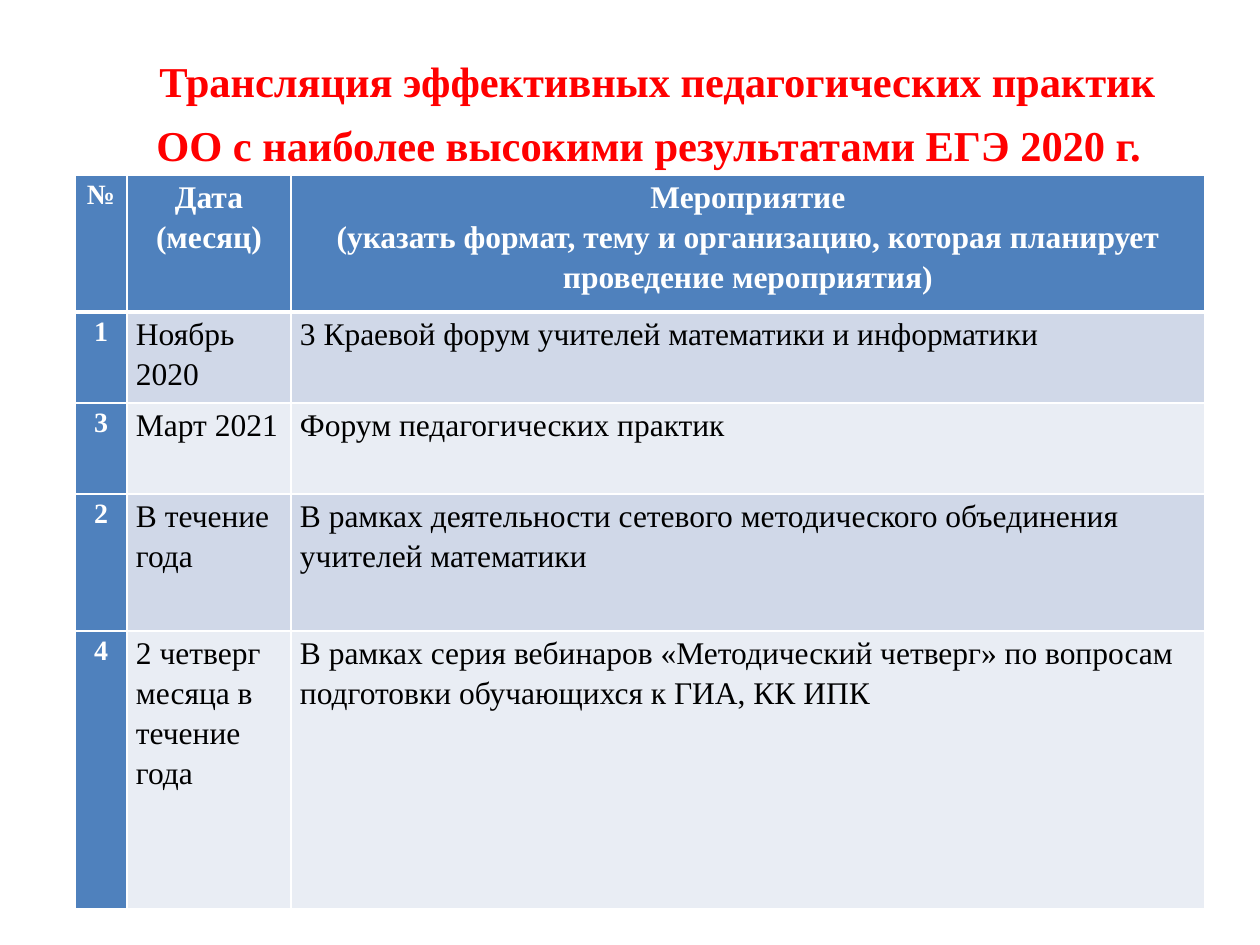
from dataclasses import dataclass

from lxml import etree
from pptx import Presentation
from pptx.dml.color import RGBColor
from pptx.enum.text import MSO_ANCHOR, PP_ALIGN
from pptx.oxml.ns import qn
from pptx.util import Emu, Pt

EMU_PER_PX = 914400 / 126
CENTER = PP_ALIGN.CENTER
LEFT = PP_ALIGN.LEFT
MIDDLE = MSO_ANCHOR.MIDDLE
FONT = "Times New Roman"
WHITE = "FFFFFF"
BLACK = "000000"
RED = "FF0000"
BLUE = "4F81BD"
BANDS = ("D0D8E8", "E9EDF4")
COLUMN_WIDTHS = (52, 164, 914)
HEADER_HEIGHT = 137
HEADINGS = (
    "№",
    "Дата\n(месяц)",
    "Мероприятие\n(указать формат, тему и организацию, которая планирует проведение мероприятия)",
)


@dataclass
class Event:
    number: str
    date: str
    activity: str
    height: int
    space_after: int = 0


EVENTS = (
    Event("1", "Ноябрь 2020", "3 Краевой форум учителей математики и информатики", 91, 10),
    Event("3", "Март 2021", "Форум педагогических практик", 91, 10),
    Event("2", "В течение года",
          "В рамках деятельности сетевого методического объединения учителей математики", 137),
    Event("4", "2 четверг месяца в течение года",
          "В рамках серия вебинаров «Методический четверг» по вопросам подготовки "
          "обучающихся к ГИА, КК ИПК", 278),
)


def px(length: int) -> Emu:
    return Emu(round(length * EMU_PER_PX))


def rgb(value: str) -> RGBColor:
    return RGBColor.from_string(value)


def add_run(paragraph, text: str, size: float, color: str, bold: bool) -> None:
    run = paragraph.add_run()
    run.text = text
    run.font.name = FONT
    run.font.size = Pt(size)
    run.font.bold = bold
    run.font.color.rgb = rgb(color)


def write(frame, text: str, *, size: float = 18, color: str = BLACK, bold: bool = False,
          align=LEFT, space_after: int = 0, lead_size: float = 0) -> None:
    frame.word_wrap = True
    for index, line in enumerate(text.split("\n")):
        paragraph = frame.add_paragraph() if index else frame.paragraphs[0]
        paragraph.alignment = align
        paragraph.line_spacing = 1.15
        paragraph.space_after = Pt(space_after)
        if lead_size:
            add_run(paragraph, " ", lead_size, color, False)
        add_run(paragraph, line, size, color, bold)


def set_borders(cell, bottom_width: float) -> None:
    properties = cell._tc.get_or_add_tcPr()
    widths = {"a:lnL": 1, "a:lnR": 1, "a:lnT": 1, "a:lnB": bottom_width}
    for position, (tag, width) in enumerate(widths.items()):
        line = etree.Element(qn(tag), w=str(Pt(width)))
        fill = etree.SubElement(line, qn("a:solidFill"))
        etree.SubElement(fill, qn("a:srgbClr"), val=WHITE)
        properties.insert(position, line)


def fill_cell(cell, text: str, fill: str, *, bottom_width: float = 1, **text_format) -> None:
    cell.margin_left = cell.margin_right = px(9)
    cell.margin_top = cell.margin_bottom = 0
    cell.fill.solid()
    cell.fill.fore_color.rgb = rgb(fill)
    set_borders(cell, bottom_width)
    write(cell.text_frame, text, **text_format)


def add_title(slide) -> None:
    frame = slide.shapes.add_textbox(px(63), px(38), px(1134), px(158)).text_frame
    frame.vertical_anchor = MIDDLE
    frame.margin_left = px(50)
    frame.margin_bottom = px(54)
    write(frame, "Трансляция эффективных педагогических практик ОО с наиболее высокими "
          "результатами ЕГЭ 2020 г.",
          size=24.3, color=RED, bold=True, align=CENTER, lead_size=39.6)


def add_schedule(slide) -> None:
    heights = (HEADER_HEIGHT, *(event.height for event in EVENTS))
    table = slide.shapes.add_table(len(heights), len(COLUMN_WIDTHS), px(75), px(175),
                                   px(sum(COLUMN_WIDTHS)), px(sum(heights))).table
    for column, width in zip(table.columns, COLUMN_WIDTHS):
        column.width = px(width)
    for row, height in zip(table.rows, heights):
        row.height = px(height)
    for column, heading in enumerate(HEADINGS):
        fill_cell(table.cell(0, column), heading, BLUE, bottom_width=3,
                  size=18 if column else 16, color=WHITE, bold=True, align=CENTER)
    for row, event in enumerate(EVENTS, start=1):
        fill_cell(table.cell(row, 0), event.number, BLUE,
                  size=16, color=WHITE, bold=True, align=CENTER)
        for column, text in enumerate((event.date, event.activity), start=1):
            fill_cell(table.cell(row, column), text, BANDS[(row - 1) % 2],
                      space_after=event.space_after)


def main() -> None:
    presentation = Presentation()
    presentation.slide_width = px(1260)
    presentation.slide_height = px(945)
    slide = presentation.slides.add_slide(presentation.slide_layouts[6])
    add_title(slide)
    add_schedule(slide)
    presentation.save("out.pptx")


if __name__ == "__main__":
    main()
